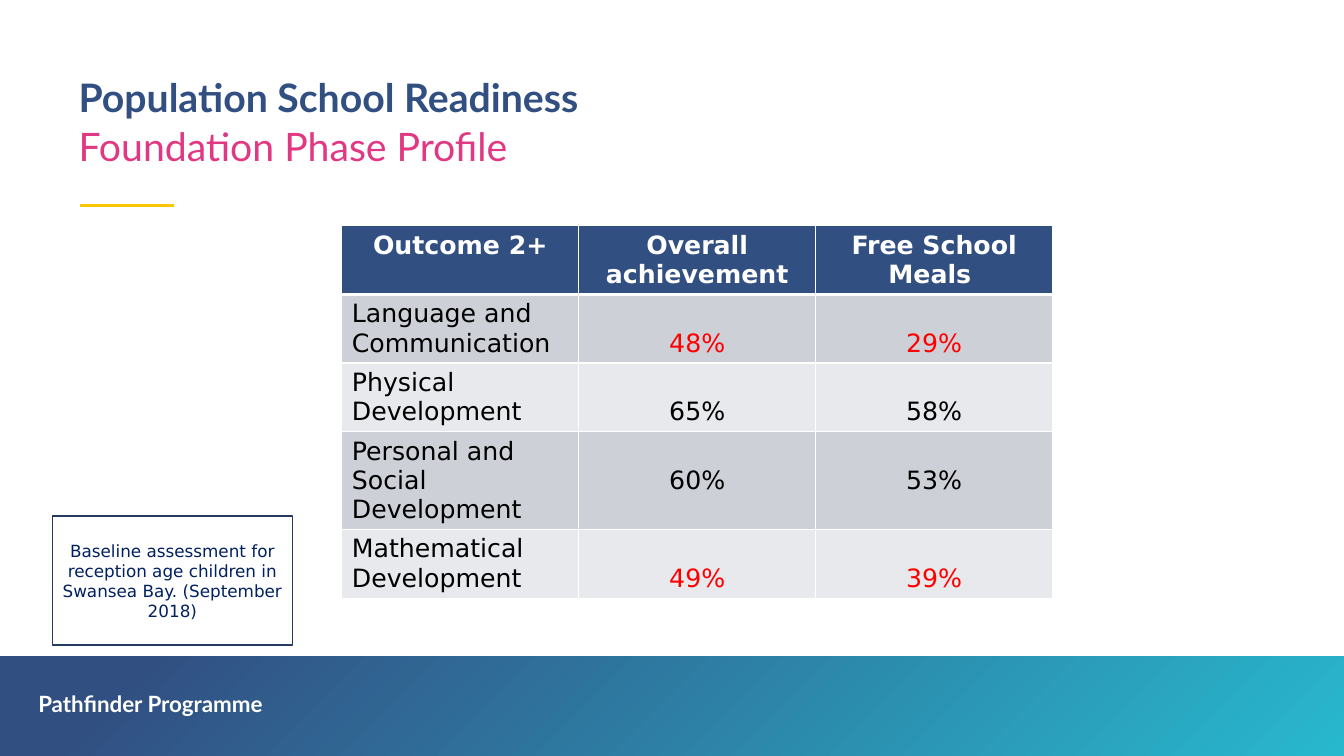
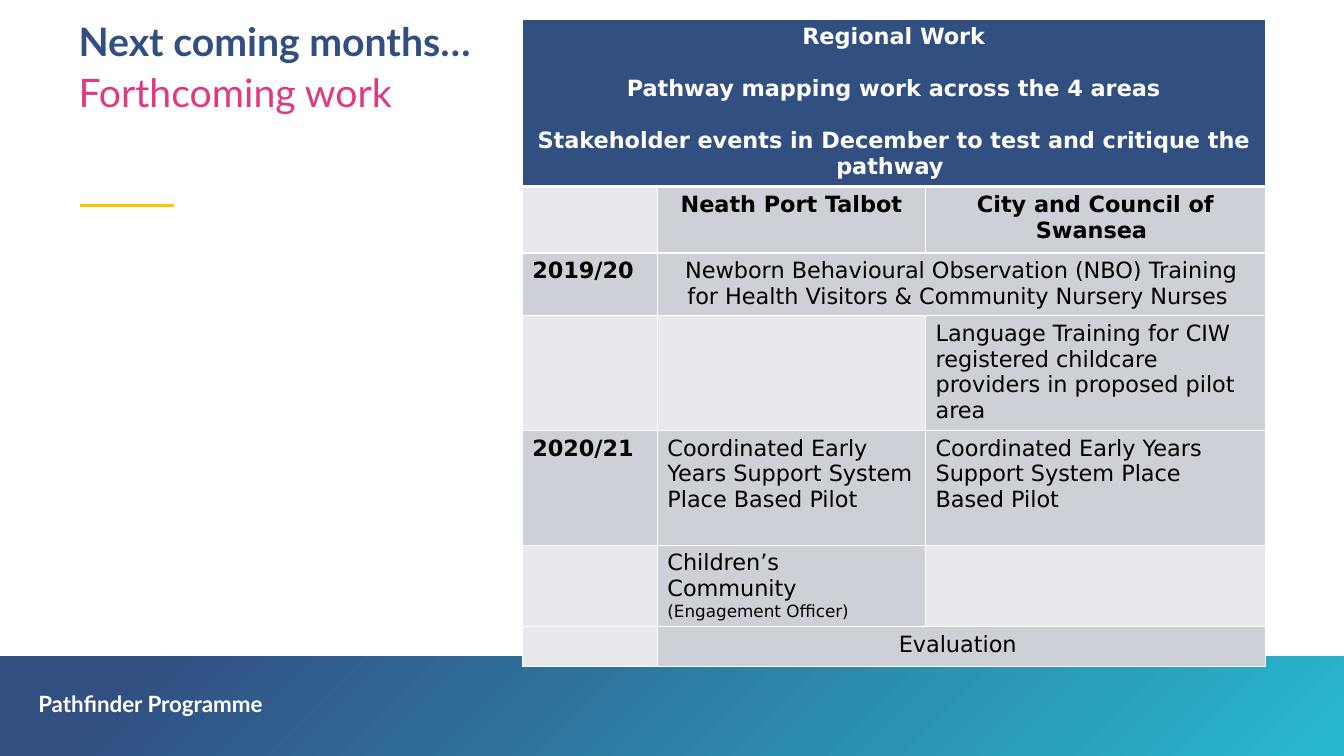
"""Build the two Pathfinder Programme slides: school readiness and forthcoming work."""
from dataclasses import dataclass

from lxml import etree
from pptx import Presentation
from pptx.dml.color import RGBColor
from pptx.enum.shapes import MSO_CONNECTOR as Connector, MSO_SHAPE as Shape
from pptx.enum.text import MSO_ANCHOR as Anchor, MSO_AUTO_SIZE as AutoSize, PP_ALIGN as Align
from pptx.oxml.ns import qn
from pptx.util import Inches, Pt


@dataclass(frozen=True)
class Theme:
    navy: str = "324F82"
    teal: str = "28B8CE"
    pink: str = "E03882"
    yellow: str = "F9C402"
    red: str = "FF0000"
    black: str = "000000"
    white: str = "FFFFFF"
    shaded: str = "CED0D8"
    pale: str = "E8E9ED"
    note_text: str = "002060"
    note_line: str = "253A60"
    heading_font: str = "Lato"
    body_font: str = "DejaVu Sans"
    heading_size: int = 28
    footer_size: int = 16
    note_size: int = 12


theme = Theme()


@dataclass
class Cell:
    text: str = ""
    fill: str = theme.shaded
    color: str = theme.black
    bold: bool = False
    align: Align = Align.LEFT
    span: int = 1
    top: float = 0.05
    gap: float = 0
    note: str = ""


def write(frame, text, *, size, color, font=theme.body_font, bold=False, align=Align.LEFT,
          spacing=1.0, gap=0, note="", flush=False):
    frame.word_wrap = True
    if flush:
        frame.auto_size, frame.vertical_anchor = AutoSize.NONE, Anchor.TOP
        frame.margin_left = frame.margin_right = frame.margin_top = frame.margin_bottom = 0
    for index, line in enumerate(text.split("\n")):
        para = frame.add_paragraph() if index else frame.paragraphs[0]
        para.alignment = align
        para.line_spacing = spacing
        para.space_before = Pt(gap if index else 0)
        for words, points in ((line, size), (note, theme.note_size)):
            if words or points == size:
                span = para.add_run()
                span.text = words
                span.font.name, span.font.size, span.font.bold = font, Pt(points), bold
                span.font.color.rgb = RGBColor.from_string(color)


def add_border(cell, side, points):
    line = etree.SubElement(cell._tc.get_or_add_tcPr(), qn(f"a:ln{side}"), w=str(Pt(points)))
    fill = etree.SubElement(line, qn("a:solidFill"))
    etree.SubElement(fill, qn("a:srgbClr"), val=theme.white)


header = dict(fill=theme.navy, color=theme.white, bold=True, align=Align.CENTER)
outcomes = [
    ("Language and Communication", "48%", "29%", theme.red),
    ("Physical Development", "65%", "58%", theme.black),
    ("Personal and Social Development", "60%", "53%", theme.black),
    ("Mathematical Development", "49%", "39%", theme.red),
]
profile_rows = [[Cell(label, **header)
                 for label in ("Outcome 2+", "Overall achievement", "Free School Meals ")]]
for index, (outcome, overall, free_meals, color) in enumerate(outcomes):
    fill = theme.pale if index % 2 else theme.shaded
    figures = [Cell(figure, fill=fill, color=color, align=Align.CENTER, top=0.34)
               for figure in (overall, free_meals)]
    profile_rows.append([Cell(outcome, fill=fill), *figures])

empty = Cell(fill=theme.pale)
pilot = Cell("Coordinated Early Years Support System Place Based Pilot")
regional_work = "\n".join([
    "Regional Work",
    "Pathway mapping work across the 4 areas",
    "Stakeholder events in December to test and critique the pathway ",
])
work_rows = [
    [Cell(regional_work, span=3, gap=18.6, **header)],
    [empty, Cell("Neath Port Talbot", bold=True, align=Align.CENTER),
     Cell("City and Council of Swansea ", bold=True, align=Align.CENTER)],
    [Cell("2019/20", bold=True),
     Cell("Newborn Behavioural Observation (NBO) Training for Health Visitors "
          "& Community Nursery Nurses ", span=2, align=Align.CENTER)],
    [empty, empty,
     Cell("Language Training for CIW registered childcare providers in proposed pilot area")],
    [Cell("2020/21", bold=True), pilot, pilot],
    [empty, Cell("Children’s Community ", note="(Engagement Officer)"), empty],
    [empty, Cell("Evaluation ", span=2, align=Align.CENTER)],
]

pages = [
    dict(title="Population School Readiness", title_top=0.78,
         subtitle="Foundation Phase Profile", subtitle_top=1.27,
         rows=profile_rows, left=3.39, top=2.24, size=18,
         widths=[2.35] * 3, heights=[0.68, 0.68, 0.68, 0.97, 0.68],
         note="Baseline assessment for reception age children in Swansea Bay. (September 2018)"),
    dict(title="Next coming months…", title_top=0.22,
         subtitle="Forthcoming work", subtitle_top=0.73,
         rows=work_rows, left=5.18, top=0.19, size=16,
         widths=[1.34, 2.66, 3.37], heights=[1.66, 0.66, 0.62, 1.14, 1.14, 0.81, 0.39],
         note=""),
]

deck = Presentation()
deck.slide_width, deck.slide_height = Inches(13.33), Inches(7.5)

for content in pages:
    page = deck.slides.add_slide(deck.slide_layouts[5])
    shapes = page.shapes

    band = shapes.add_shape(Shape.RECTANGLE, 0, Inches(6.51), deck.slide_width, Inches(0.99))
    band.shadow.inherit = False
    band.line.fill.background()
    band.fill.gradient()
    band.fill.gradient_angle = 315
    for stop, color, position in zip(band.fill.gradient_stops, (theme.navy, theme.teal), (0.1, 1)):
        stop.color.rgb = RGBColor.from_string(color)
        stop.position = position

    accent = shapes.add_connector(Connector.STRAIGHT, Inches(0.79), Inches(2.04),
                                  Inches(1.73), Inches(2.04))
    accent.line.color.rgb = RGBColor.from_string(theme.yellow)
    accent.line.width = Pt(2.25)
    etree.SubElement(accent._element.spPr, qn("a:effectLst"))

    footer = shapes.add_textbox(Inches(0.38), Inches(6.88), Inches(3.93), Inches(0.24))
    write(footer.text_frame, "Pathfinder Programme", size=theme.footer_size, color=theme.white,
          font=theme.heading_font, bold=True, spacing=0.9, flush=True)

    title = shapes.title
    title.left, title.top = Inches(0.78), Inches(content["title_top"])
    title.width, title.height = Inches(11.77), Inches(0.43)
    subtitle = shapes.add_textbox(Inches(0.78), Inches(content["subtitle_top"]),
                                  Inches(11.77), Inches(0.43))
    for box, text, color, bold in ((title, content["title"], theme.navy, True),
                                   (subtitle, content["subtitle"], theme.pink, False)):
        write(box.text_frame, text, size=theme.heading_size, color=color,
              font=theme.heading_font, bold=bold, spacing=0.9, flush=True)

    widths, heights = content["widths"], content["heights"]
    table = shapes.add_table(len(heights), len(widths), Inches(content["left"]),
                             Inches(content["top"]), Inches(sum(widths)),
                             Inches(sum(heights))).table
    table.first_row = table.horz_banding = False
    for column, width in zip(table.columns, widths):
        column.width = Inches(width)
    for row, height in zip(table.rows, heights):
        row.height = Inches(height)
    for row_index, row in enumerate(content["rows"]):
        for cell in table.rows[row_index].cells:
            for side in "LRTB":
                heavy = (row_index, side) in ((0, "B"), (1, "T"))
                add_border(cell, side, 3 if heavy else 1)
        column_index = 0
        for item in row:
            cell = table.cell(row_index, column_index)
            column_index += item.span
            if item.span > 1:
                cell.merge(table.cell(row_index, column_index - 1))
            cell.fill.solid()
            cell.fill.fore_color.rgb = RGBColor.from_string(item.fill)
            cell.margin_top = Inches(item.top)
            write(cell.text_frame, item.text, size=content["size"], color=item.color,
                  bold=item.bold, align=item.align, gap=item.gap, note=item.note)

    if content["note"]:
        note = shapes.add_shape(Shape.RECTANGLE, Inches(0.52), Inches(5.12),
                                Inches(2.38), Inches(1.28))
        note.shadow.inherit = False
        note.fill.solid()
        note.fill.fore_color.rgb = RGBColor.from_string(theme.white)
        note.line.color.rgb = RGBColor.from_string(theme.note_line)
        note.line.width = Pt(1)
        note.text_frame.vertical_anchor = Anchor.MIDDLE
        write(note.text_frame, content["note"], size=theme.note_size, color=theme.note_text,
              align=Align.CENTER)

deck.save("out.pptx")
